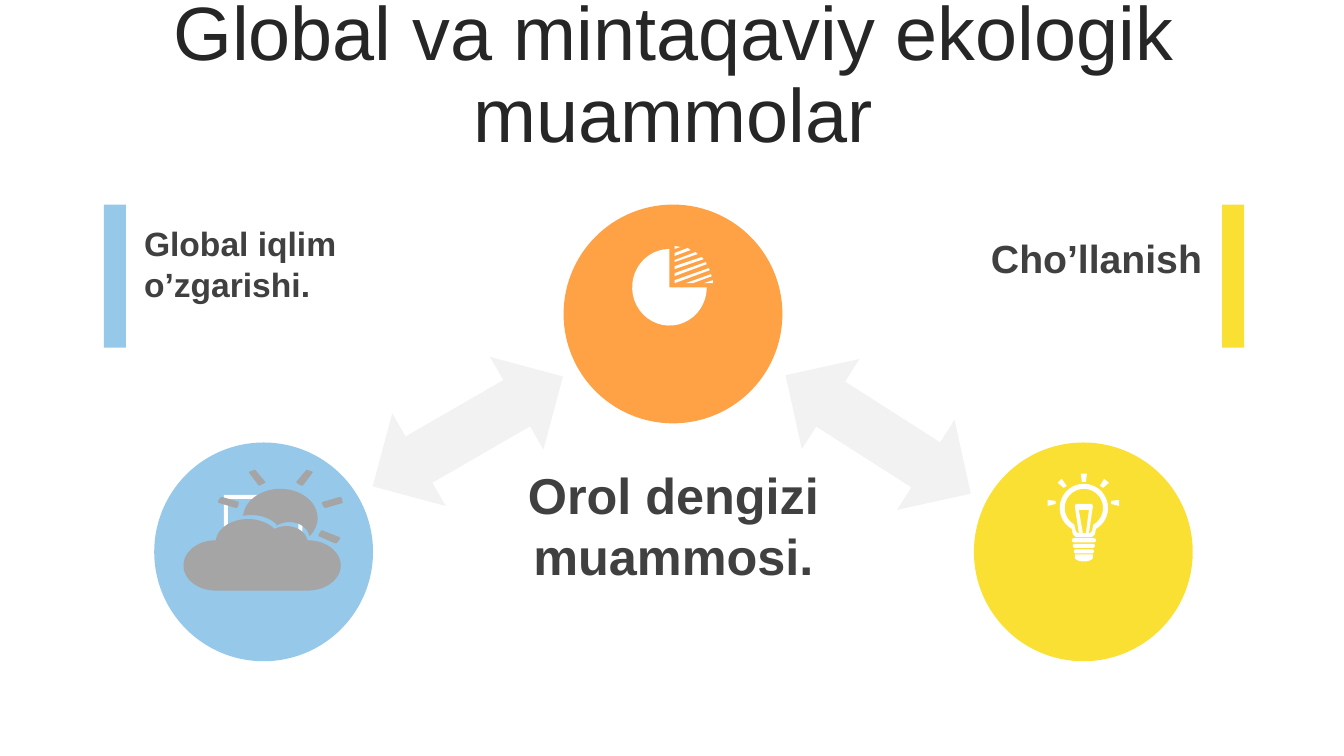
import math
from pptx import Presentation, util as u
from pptx.dml.color import RGBColor
from pptx.enum import shapes, text

ORANGE, YELLOW, BLUE = "FFA246", "FBE034", "96C8E9"
WHITE, GRAY, PALE, DARK = "FFFFFF", "A5A5A5", "F2F2F2", "404040"

presentation = Presentation()
presentation.slide_width = u.Inches(13.33)
presentation.slide_height = u.Inches(7.5)
slide = presentation.slides.add_slide(presentation.slide_layouts[6])


def paint(shape, color):
    shape.shadow.inherit = False
    shape.fill.solid()
    shape.fill.fore_color.rgb = RGBColor.from_string(color)
    shape.line.fill.background()


def add_text(content, box, size, align, color=DARK, bold=True, grow=True):
    shape = slide.shapes.add_textbox(*map(u.Inches, box))
    frame = shape.text_frame
    frame.word_wrap = True
    frame.auto_size = text.MSO_AUTO_SIZE.SHAPE_TO_FIT_TEXT if grow else text.MSO_AUTO_SIZE.NONE
    frame.vertical_anchor = text.MSO_ANCHOR.MIDDLE
    paragraph = frame.paragraphs[0]
    paragraph.alignment = align
    run = paragraph.add_run()
    run.text = content
    run.font.name = "Arial"
    run.font.size = u.Pt(size)
    run.font.bold = bold
    run.font.color.rgb = RGBColor.from_string(color)
    return paragraph


title = add_text("Global va mintaqaviy ekologik muammolar", (0.35, 0.37, 12.66, 0.79), 54,
                 text.PP_ALIGN.CENTER, color="262626", bold=False, grow=False)
title.line_spacing = 0.9
title.space_before = u.Pt(10)

kinds = shapes.MSO_SHAPE
for kind, box, rotation, color in [
    (kinds.OVAL, (5.59, 2.03, 2.17, 2.17), 0, ORANGE),
    (kinds.OVAL, (9.66, 4.39, 2.17, 2.17), 0, YELLOW),
    (kinds.OVAL, (1.53, 4.39, 2.17, 2.17), 0, BLUE),
    (kinds.LEFT_RIGHT_ARROW, (3.55, 3.75, 2.18, 1.06), 330, PALE),
    (kinds.LEFT_RIGHT_ARROW, (7.62, 3.78, 2.18, 1.06), 32.6, PALE),
    (kinds.RECTANGLE, (1.03, 2.03, 0.22, 1.42), 0, BLUE),
    (kinds.RECTANGLE, (12.12, 2.03, 0.22, 1.42), 0, YELLOW),
]:
    shape = slide.shapes.add_shape(kind, *map(u.Inches, box))
    shape.rotation = rotation
    paint(shape, color)

add_text("Orol dengizi muammosi.", (4.71, 4.55, 3.94, 1.31), 36, text.PP_ALIGN.CENTER)
add_text("Global iqlim o’zgarishi.", (1.33, 2.16, 3.01, 0.91), 24, text.PP_ALIGN.LEFT)
add_text("Cho’llanish", (9.01, 2.27, 3.01, 0.57), 28, text.PP_ALIGN.RIGHT)

# Outline entries: (x, y) is a corner; (x, y, x radius, y radius, from, to) is an arc in degrees.
pie_chart = [
    [(6.64, 2.85), (6.64, 2.85, 0.37, 0.38, 0, 270)],
    [(7.07, 2.78), (7.07, 2.81), (6.98, 2.81)],
    [(7.05, 2.72), (7.06, 2.74), (6.87, 2.81), (6.8, 2.81)],
    [(7.03, 2.66), (7.04, 2.68), (6.69, 2.81), (6.69, 2.78)],
    [(7, 2.6), (7.01, 2.62), (6.69, 2.74), (6.69, 2.71)],
    [(6.96, 2.55), (6.98, 2.57), (6.69, 2.67), (6.69, 2.64)],
    [(6.9, 2.5), (6.92, 2.52), (6.69, 2.6), (6.69, 2.58)],
    [(6.82, 2.46), (6.85, 2.48), (6.69, 2.54), (6.69, 2.51)],
    [(6.69, 2.44), (6.75, 2.45), (6.69, 2.47)],
]
monitor = [
    [(2.54, 5.5), (2.68, 5.5), (2.73, 5.57), (2.8, 5.57), (2.8, 5.62),
     (2.42, 5.62), (2.42, 5.57), (2.49, 5.57)],
    [(2.26, 4.95), (2.26, 5.4), (2.96, 5.4), (2.96, 4.95)],
    [(2.22, 4.91), (3, 4.91), (3, 5.48), (2.22, 5.48)],
]
light_bulb = [
    [(10.75, 5.04, 0.24, 0.24, 120, 420), (10.86, 5.3), (10.83, 5.33), (10.67, 5.33), (10.64, 5.3)],
    [(10.75, 5.04, 0.19, 0.19, 120, 420), (10.83, 5.27), (10.81, 5.29), (10.8, 5.29), (10.84, 5.02),
     (10.83, 5), (10.67, 5), (10.66, 5.02), (10.7, 5.29), (10.69, 5.29), (10.67, 5.27)],
    [(10.7, 5.06), (10.74, 5.29), (10.77, 5.29), (10.8, 5.06)],
    [(10.66, 5.5), (10.84, 5.5), (10.75, 5.53, 0.09, 0.04, 0, 180)],
    [(10.72, 4.7), (10.78, 4.7), (10.77, 4.78), (10.73, 4.78)],
    [(10.95, 4.75), (11, 4.79), (10.94, 4.84), (10.91, 4.82)],
    [(10.53, 4.75), (10.58, 4.82), (10.55, 4.84), (10.49, 4.79)],
    [(11.1, 4.96), (11.1, 5.02), (11.02, 5), (11.02, 4.97)],
    [(10.39, 4.96), (10.47, 4.97), (10.47, 5), (10.39, 5.02)],
]
for row, half_width in enumerate((0.1, 0.09, 0.08)):
    middle = 5.36 + 0.055 * row
    light_bulb.append([(10.75 - half_width, middle, 0.02, 0.02, 90, 270),
                       (10.75 + half_width, middle, 0.02, 0.02, -90, 90)])
cloudy_sun = [
    [(2.14, 5.61, 0.32, 0.25, 90, 270), (2.46, 5.38, 0.32, 0.23, 185, 325),
     (2.84, 5.38, 0.21, 0.16, 235, 355), (3.05, 5.61, 0.33, 0.25, 270, 450)],
    [(2.78, 5.14, 0.37, 0.29, 184, 398), (2.87, 5.34, 0.2, 0.16, 350, 230),
     (2.49, 5.33, 0.31, 0.22, 325, 255)],
    [(3.19, 5.26), (3.37, 5.33), (3.37, 5.35), (3.34, 5.39), (3.32, 5.39), (3.16, 5.32), (3.16, 5.3)],
    [(3.37, 4.93), (3.39, 4.94), (3.4, 4.99), (3.23, 5.04), (3.21, 5.03), (3.19, 4.99), (3.2, 4.98)],
    [(2.2, 4.93), (2.37, 4.98), (2.36, 5.03), (2.34, 5.04), (2.17, 4.99), (2.16, 4.98), (2.18, 4.94)],
    [(3.04, 4.66), (3.1, 4.68), (3.1, 4.69), (3.01, 4.81), (2.99, 4.82), (2.94, 4.79), (2.94, 4.78)],
    [(2.53, 4.66), (2.63, 4.78), (2.63, 4.79), (2.57, 4.82), (2.56, 4.81), (2.47, 4.69), (2.47, 4.68)],
]

for icon, color in [(pie_chart, WHITE), (monitor, WHITE), (light_bulb, WHITE), (cloudy_sun, GRAY)]:
    builder = None
    for outline in icon:
        points = []
        for entry in outline:
            if len(entry) == 2:
                points.append(entry)
                continue
            x, y, x_radius, y_radius, start, end = entry
            for step in range(33):
                angle = math.radians(start + (end - start) * step / 32)
                points.append((x + x_radius * math.cos(angle), y + y_radius * math.sin(angle)))
        points = [(u.Inches(x), u.Inches(y)) for x, y in points]
        if builder is None:
            builder = slide.shapes.build_freeform(*points[0])
        else:
            builder.move_to(*points[0])
        builder.add_line_segments(points[1:], close=True)
    paint(builder.convert_to_shape(), color)

presentation.save("out.pptx")
